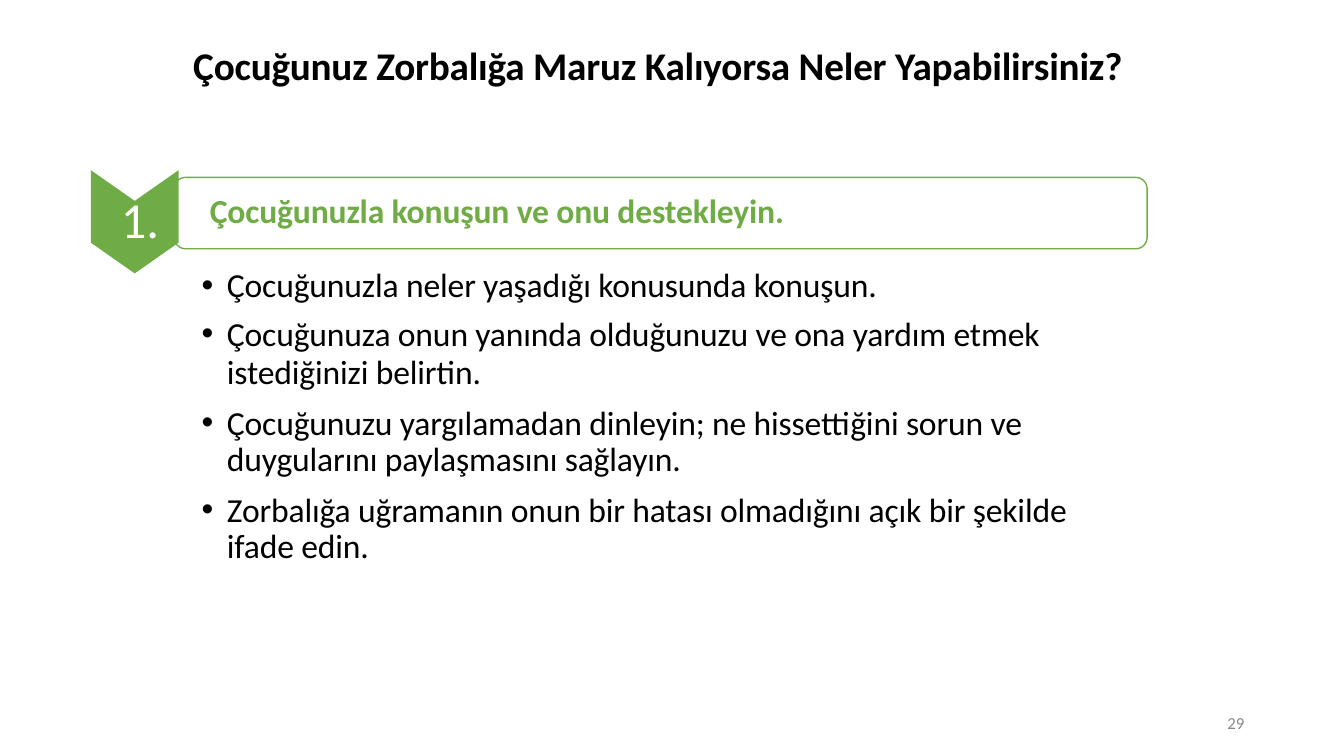
from lxml.etree import SubElement
from pptx import Presentation
from pptx.dml.color import RGBColor
from pptx.enum.shapes import MSO_SHAPE as Shape
from pptx.enum.text import MSO_ANCHOR as Anchor, MSO_AUTO_SIZE as AutoSize, PP_ALIGN as Align
from pptx.oxml.ns import qn
from pptx.util import Cm, Pt

GREEN = RGBColor(0x6F, 0xAC, 0x46)
BLACK = RGBColor(0, 0, 0)
WHITE = RGBColor(255, 255, 255)
GREY = RGBColor(0x88, 0x88, 0x88)

TITLE = "Çocuğunuz Zorbalığa Maruz Kalıyorsa Neler Yapabilirsiniz?"
STEP_NUMBER = "1."
STEP = "Çocuğunuzla konuşun ve onu destekleyin."
PAGE = "29"
ADVICE = [
    ("Çocuğunuzla neler yaşadığı konusunda konuşun.", {}),
    ("Çocuğunuza onun yanında olduğunuzu ve ona yardım etmek istediğinizi belirtin.",
     {"line_spacing": Pt(27.4), "space_before": Pt(7.2)}),
    ("Çocuğunuzu yargılamadan dinleyin; ne hissettiğini sorun ve duygularını paylaşmasını sağlayın.",
     {"line_spacing": Pt(25.9), "space_before": Pt(10.3)}),
    ("Zorbalığa uğramanın onun bir hatası olmadığını açık bir şekilde ifade edin.",
     {"line_spacing": Pt(25.9), "space_before": Pt(10.1)}),
]

TITLE_FONT = {"size": Pt(28), "bold": True, "color": BLACK}
STEP_FONT = {"size": Pt(24), "bold": True, "color": GREEN}
NUMBER_FONT = {"size": Pt(36), "bold": False, "color": WHITE}
ADVICE_FONT = {"size": Pt(24), "bold": False, "color": BLACK}
PAGE_FONT = {"size": Pt(12), "bold": False, "color": GREY}

TITLE_BOX = (Cm(4.87), Cm(1.02), Cm(23.8), Cm(1.24))
BANNER_BOX = (Cm(4.39), Cm(4.47), Cm(24.52), Cm(1.8))
STEP_BOX = (Cm(5.26), Cm(4.75), Cm(14.68), Cm(1.09))
NUMBER_BOX = (Cm(3.02), Cm(4.7), Cm(1.04), Cm(1.6))
ADVICE_BOX = (Cm(5.08), Cm(6.38), Cm(22.07), Cm(7.87))
PAGE_BOX = (Cm(30.83), Cm(17.96), Cm(0.64), Cm(0.51))
ARROW_LEFT, ARROW_TOP, ARROW_WIDTH, ARROW_HEIGHT = Cm(2.29), Cm(4.29), Cm(2.21), Cm(2.6)
BULLET_INDENT = Cm(0.64)


def set_all(target, values):
    for name, value in values.items():
        setattr(target, name, value)


def prepare(tf, top=Cm(0.03), wrap=True):
    set_all(tf, {"margin_left": 0, "margin_right": 0, "margin_top": top, "margin_bottom": 0,
                 "word_wrap": wrap, "auto_size": AutoSize.NONE, "vertical_anchor": Anchor.TOP})


def write(p, text, font, spacing=-10):
    p.alignment = Align.LEFT
    r = p.add_run()
    r.text = text
    set_all(r.font, {"name": "Calibri", "size": font["size"], "bold": font["bold"]})
    r.font.color.rgb = font["color"]
    r._r.get_or_add_rPr().set("spc", str(spacing))


def add_label(s, box, text, font, top=Cm(0.03), indent=Cm(0.03), spacing=-10):
    tf = s.shapes.add_textbox(*box).text_frame
    prepare(tf, top, False)
    p = tf.paragraphs[0]
    p._p.get_or_add_pPr().set("marL", str(indent))
    write(p, text, font, spacing)


def add_bullet(p):
    pPr = p._p.get_or_add_pPr()
    set_indent = {"marL": BULLET_INDENT, "indent": -BULLET_INDENT}
    for name, value in set_indent.items():
        pPr.set(name, str(value))
    SubElement(pPr, qn("a:buFont"), typeface="Arial")
    SubElement(pPr, qn("a:buChar"), char="•")


def main():
    prs = Presentation()
    prs.slide_width, prs.slide_height = Cm(33.87), Cm(19.05)
    s = prs.slides.add_slide(prs.slide_layouts[5])

    title = s.shapes.title
    set_all(title, dict(zip(("left", "top", "width", "height"), TITLE_BOX)))
    prepare(title.text_frame)
    write(title.text_frame.paragraphs[0], TITLE, TITLE_FONT, -13)

    banner = s.shapes.add_shape(Shape.ROUNDED_RECTANGLE, *BANNER_BOX)
    banner.adjustments[0] = 0.16
    banner.shadow.inherit = False
    banner.fill.background()
    banner.line.color.rgb = GREEN
    banner.line.width = Pt(0.96)

    tf = s.shapes.add_textbox(*ADVICE_BOX).text_frame
    prepare(tf, Cm(0.28))
    for i, (text, spacing) in enumerate(ADVICE):
        p = tf.add_paragraph() if i else tf.paragraphs[0]
        add_bullet(p)
        set_all(p, spacing)
        write(p, text, ADVICE_FONT)

    shift = (ARROW_HEIGHT - ARROW_WIDTH) // 2
    arrow = s.shapes.add_shape(Shape.CHEVRON, ARROW_LEFT - shift, ARROW_TOP + shift,
                               ARROW_HEIGHT, ARROW_WIDTH)
    arrow.rotation = 90
    arrow.adjustments[0] = 0.35
    arrow.shadow.inherit = False
    arrow.fill.solid()
    arrow.fill.fore_color.rgb = GREEN
    arrow.line.fill.background()

    add_label(s, NUMBER_BOX, STEP_NUMBER, NUMBER_FONT)
    add_label(s, STEP_BOX, STEP, STEP_FONT)
    add_label(s, PAGE_BOX, PAGE, PAGE_FONT, top=0, indent=Cm(0.1), spacing=0)

    prs.save("out.pptx")


if __name__ == "__main__":
    main()
